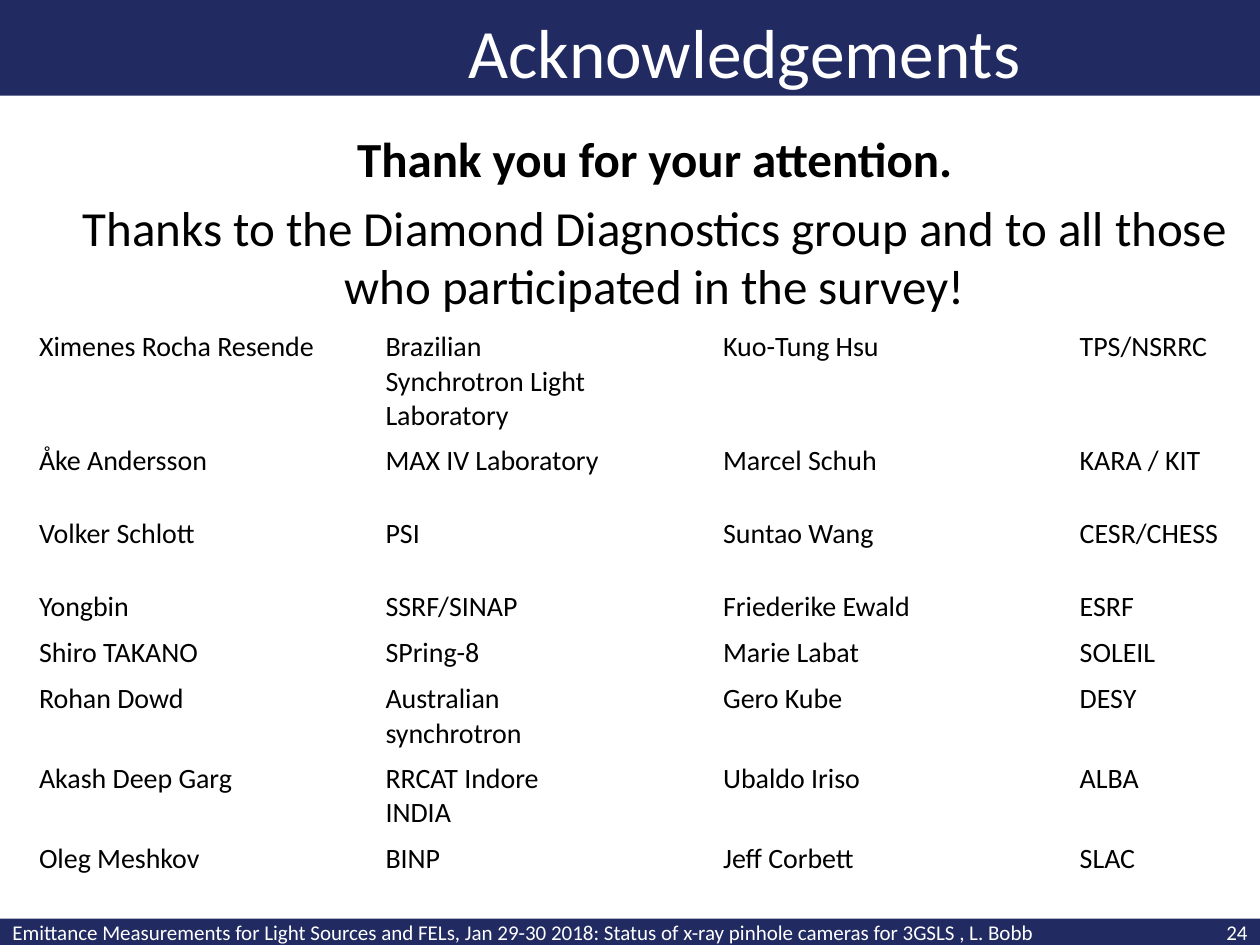
from lxml.etree import SubElement
from pptx import Presentation
from pptx.dml.color import RGBColor
from pptx.enum.shapes import MSO_SHAPE
from pptx.enum.text import MSO_ANCHOR as Anchor, PP_ALIGN as Align
from pptx.oxml.ns import qn
from pptx.util import Inches, Pt

NAVY = RGBColor(0x21, 0x2B, 0x61)
WHITE = RGBColor(0xFF, 0xFF, 0xFF)
BLACK = RGBColor(0, 0, 0)
FONT = "Calibri"
TABLE_SIZE = 16

TITLE = "Acknowledgements"
THANKS = [
    ("Thank you for your attention.", True),
    ("Thanks to the Diamond Diagnostics group and to all those "
     "who participated in the survey!", False),
]
FOOTER = ("Emittance Measurements for Light Sources and FELs, Jan 29-30 2018: "
          "Status of x-ray pinhole cameras for 3GSLS , L. Bobb")
PAGE_NUMBER = "24"
CONTRIBUTORS = [
    ("Ximenes Rocha Resende", "Brazilian Synchrotron Light Laboratory", "", "Kuo-Tung Hsu", "TPS/NSRRC"),
    ("Åke Andersson", "MAX IV Laboratory", "", "Marcel Schuh", "KARA / KIT"),
    ("Volker Schlott", "PSI", "", "Suntao Wang", "CESR/CHESS"),
    ("Yongbin", "SSRF/SINAP", "", "Friederike Ewald", "ESRF"),
    ("Shiro TAKANO", "SPring-8", "", "Marie Labat", "SOLEIL"),
    ("Rohan Dowd", "Australian synchrotron", "", "Gero Kube", "DESY"),
    ("Akash Deep Garg", "RRCAT Indore INDIA", "", "Ubaldo Iriso", "ALBA"),
    ("Oleg Meshkov", "BINP", "", "Jeff Corbett", "SLAC"),
]
COLUMN_WIDTHS = [2.75, 1.97, 0.71, 2.83, 1.35]
ROW_HEIGHTS = [0.83, 0.58, 0.58, 0.33, 0.33, 0.58, 0.58, 0.33]

WIDTH, HEIGHT = 10, 7.5
HEADER_HEIGHT, FOOTER_HEIGHT = 0.76, 0.21
FOOTER_TOP = HEIGHT - FOOTER_HEIGHT
NUMBER_WIDTH = 0.47


def box(left, top, width, height):
    return [Inches(value) for value in (left, top, width, height)]


def add_run(paragraph, text, size, color, bold=False):
    run = paragraph.add_run()
    run.text = text
    run.font.name = FONT
    run.font.size = Pt(size)
    run.font.bold = bold
    run.font.color.rgb = color


def add_band(slide, top, height):
    band = slide.shapes.add_shape(MSO_SHAPE.RECTANGLE, *box(0, top, WIDTH, height))
    band.shadow.inherit = False
    band.fill.solid()
    band.fill.fore_color.rgb = NAVY
    band.line.fill.background()


def add_text_frame(slide, area, anchor=Anchor.MIDDLE):
    frame = slide.shapes.add_textbox(*box(*area)).text_frame
    frame.word_wrap = True
    frame.vertical_anchor = anchor
    if anchor == Anchor.MIDDLE:
        frame.margin_top = frame.margin_bottom = 0
    return frame


def add_label(slide, area, text, size, alignment):
    paragraph = add_text_frame(slide, area).paragraphs[0]
    paragraph.alignment = alignment
    add_run(paragraph, text, size, WHITE)


def add_thanks(slide):
    frame = add_text_frame(slide, (0.39, 0.97, 9.61, 1.46), Anchor.TOP)
    for index, (text, bold) in enumerate(THANKS):
        paragraph = frame.add_paragraph() if index else frame.paragraphs[0]
        paragraph.alignment = Align.CENTER
        if index:
            paragraph.space_before = Pt(5.6)
        add_run(paragraph, text, 28, BLACK, bold)


def add_contributors(slide):
    area = box(0.21, 2.57, sum(COLUMN_WIDTHS), sum(ROW_HEIGHTS))
    table = slide.shapes.add_table(len(ROW_HEIGHTS), len(COLUMN_WIDTHS), *area).table
    table.first_row = False
    table.horz_banding = False
    for column, width in zip(table.columns, COLUMN_WIDTHS):
        column.width = Inches(width)
    for row, height, texts in zip(table.rows, ROW_HEIGHTS, CONTRIBUTORS):
        row.height = Inches(height)
        for cell, text in zip(row.cells, texts):
            cell.fill.background()
            paragraph = cell.text_frame.paragraphs[0]
            if text:
                add_run(paragraph, text, TABLE_SIZE, BLACK)
            else:
                SubElement(paragraph._p, qn("a:endParaRPr"), sz=str(TABLE_SIZE * 100))


def main():
    presentation = Presentation()
    presentation.slide_width = Inches(WIDTH)
    presentation.slide_height = Inches(HEIGHT)
    slide = presentation.slides.add_slide(presentation.slide_layouts[6])
    add_band(slide, FOOTER_TOP, FOOTER_HEIGHT)
    add_band(slide, 0, HEADER_HEIGHT)
    add_label(slide, (2.01, 0.13, 7.8, 0.55), TITLE, 39.6, Align.CENTER)
    add_label(slide, (0, FOOTER_TOP, 9.41, FOOTER_HEIGHT), FOOTER, 12, Align.LEFT)
    add_label(slide, (WIDTH - NUMBER_WIDTH, FOOTER_TOP, NUMBER_WIDTH, FOOTER_HEIGHT),
              PAGE_NUMBER, 12, Align.RIGHT)
    add_thanks(slide)
    add_contributors(slide)
    presentation.save("out.pptx")


if __name__ == "__main__":
    main()
